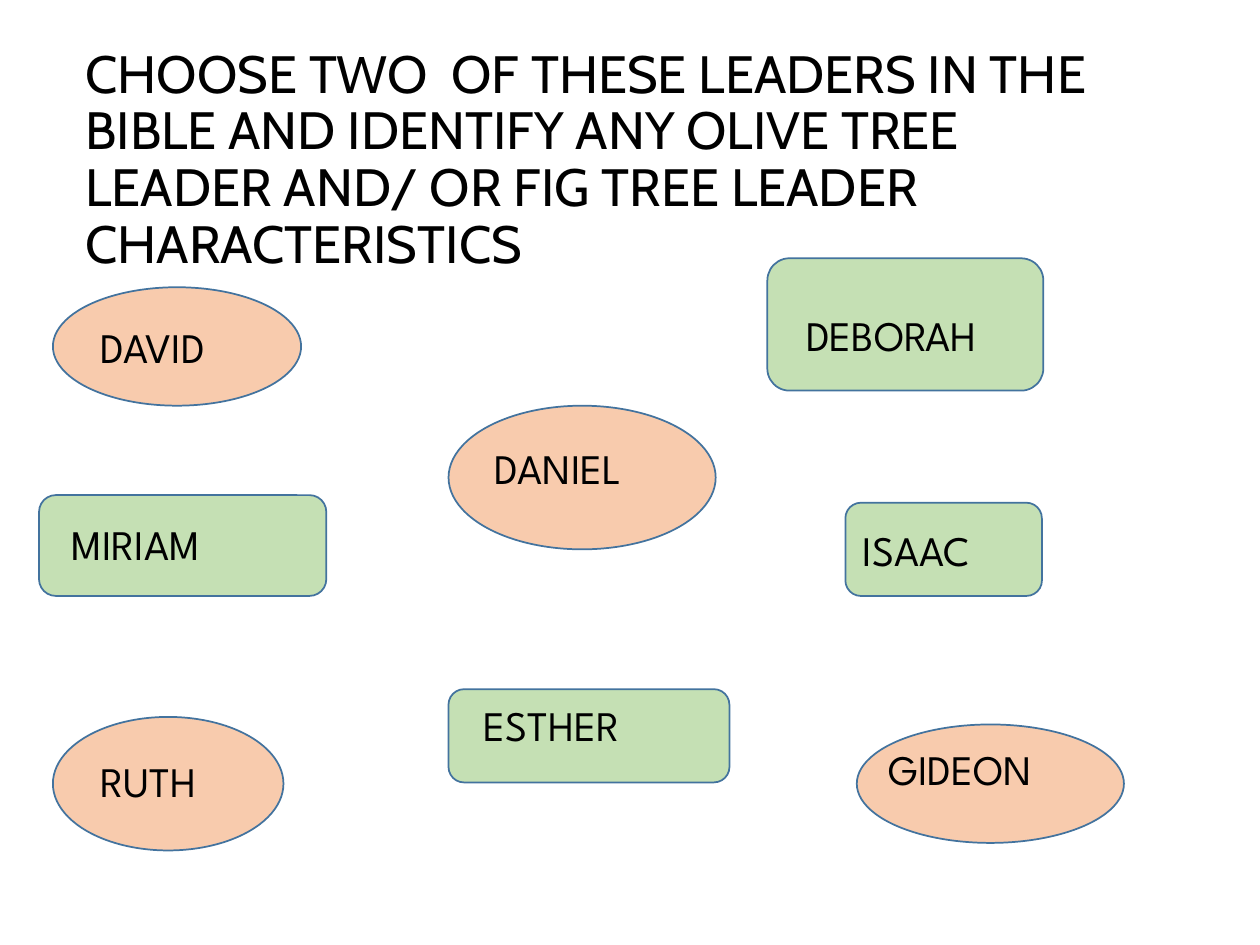
"""Builds a slide asking the class to choose two Bible leaders."""
from dataclasses import dataclass

from pptx import Presentation
from pptx.dml.color import RGBColor
from pptx.enum.shapes import MSO_SHAPE
from pptx.enum.text import MSO_ANCHOR
from pptx.util import Inches, Pt

OVAL = MSO_SHAPE.OVAL
ROUNDED = MSO_SHAPE.ROUNDED_RECTANGLE
TOP = MSO_ANCHOR.TOP
MIDDLE = MSO_ANCHOR.MIDDLE


@dataclass(frozen=True)
class Theme:
    ink: RGBColor = RGBColor(0x00, 0x00, 0x00)
    outline: RGBColor = RGBColor(0x43, 0x73, 0x9E)
    peach: RGBColor = RGBColor(0xF8, 0xCB, 0xAD)
    green: RGBColor = RGBColor(0xC5, 0xE0, 0xB4)
    title_font: str = "Cabin"
    name_font: str = "League Spartan"
    title_size: Pt = Pt(30)
    name_size: Pt = Pt(24)
    line_width: Pt = Pt(1)


@dataclass(frozen=True)
class Box:
    left: float
    top: float
    width: float
    height: float

    def lengths(self) -> tuple:
        return tuple(Inches(v) for v in (self.left, self.top, self.width, self.height))


@dataclass(frozen=True)
class Leader:
    name: str
    kind: MSO_SHAPE
    frame: Box
    label: Box


THEME = Theme()
FILLS = {OVAL: THEME.peach, ROUNDED: THEME.green}
TITLE = ("CHOOSE TWO  OF THESE LEADERS IN THE BIBLE AND IDENTIFY ANY OLIVE TREE "
         "LEADER AND/ OR FIG TREE LEADER CHARACTERISTICS")
TITLE_BOX = Box(0.58, 0.47, 8.67, 1.62)
LABEL_HEIGHT = 0.5
LEADERS = (
    Leader("DAVID", OVAL, Box(0.42, 2.28, 1.97, 0.94), Box(0.7, 2.5, 1.41, LABEL_HEIGHT)),
    Leader("GIDEON", OVAL, Box(6.8, 5.75, 2.12, 0.94), Box(6.95, 5.85, 1.97, LABEL_HEIGHT)),
    Leader("RUTH", OVAL, Box(0.42, 5.69, 1.83, 1.06), Box(0.7, 5.95, 1.27, LABEL_HEIGHT)),
    Leader("DANIEL", OVAL, Box(3.56, 3.22, 2.12, 1.14), Box(3.83, 3.46, 1.68, LABEL_HEIGHT)),
    Leader("DEBORAH", ROUNDED, Box(6.09, 2.05, 2.19, 1.05), Box(6.3, 2.41, 2.12, LABEL_HEIGHT)),
    Leader("MIRIAM", ROUNDED, Box(0.31, 3.93, 2.28, 0.8), Box(0.47, 4.07, 1.92, LABEL_HEIGHT)),
    Leader("ISAAC", ROUNDED, Box(6.71, 3.99, 1.56, 0.74), Box(6.75, 4.11, 1.52, LABEL_HEIGHT)),
    Leader("ESTHER", ROUNDED, Box(3.56, 5.47, 2.23, 0.74), Box(3.74, 5.5, 1.85, LABEL_HEIGHT)),
)


def add_text(s, text: str, box: Box, font: str, size: Pt,
             anchor: MSO_ANCHOR = TOP, spacing: float = 1.0) -> None:
    """Add a wrapped, left-aligned text box."""
    tf = s.shapes.add_textbox(*box.lengths()).text_frame
    tf.word_wrap = True
    tf.vertical_anchor = anchor
    p = tf.paragraphs[0]
    p.text = text
    p.line_spacing = spacing
    p.font.name = font
    p.font.size = size
    p.font.color.rgb = THEME.ink


def add_frame(s, leader: Leader) -> None:
    """Add the coloured shape behind a leader's name."""
    sp = s.shapes.add_shape(leader.kind, *leader.frame.lengths())
    sp.shadow.inherit = False
    sp.fill.solid()
    sp.fill.fore_color.rgb = FILLS[leader.kind]
    sp.line.color.rgb = THEME.outline
    sp.line.width = THEME.line_width


def main() -> None:
    """Build and save the slide."""
    prs = Presentation()
    prs.slide_width, prs.slide_height = Inches(10), Inches(7.5)
    s = prs.slides.add_slide(prs.slide_layouts[6])
    add_text(s, TITLE, TITLE_BOX, THEME.title_font, THEME.title_size, MIDDLE, 0.9)
    for leader in LEADERS:
        add_frame(s, leader)
    for leader in LEADERS:
        add_text(s, leader.name, leader.label, THEME.name_font, THEME.name_size)
    prs.save("out.pptx")


if __name__ == "__main__":
    main()
